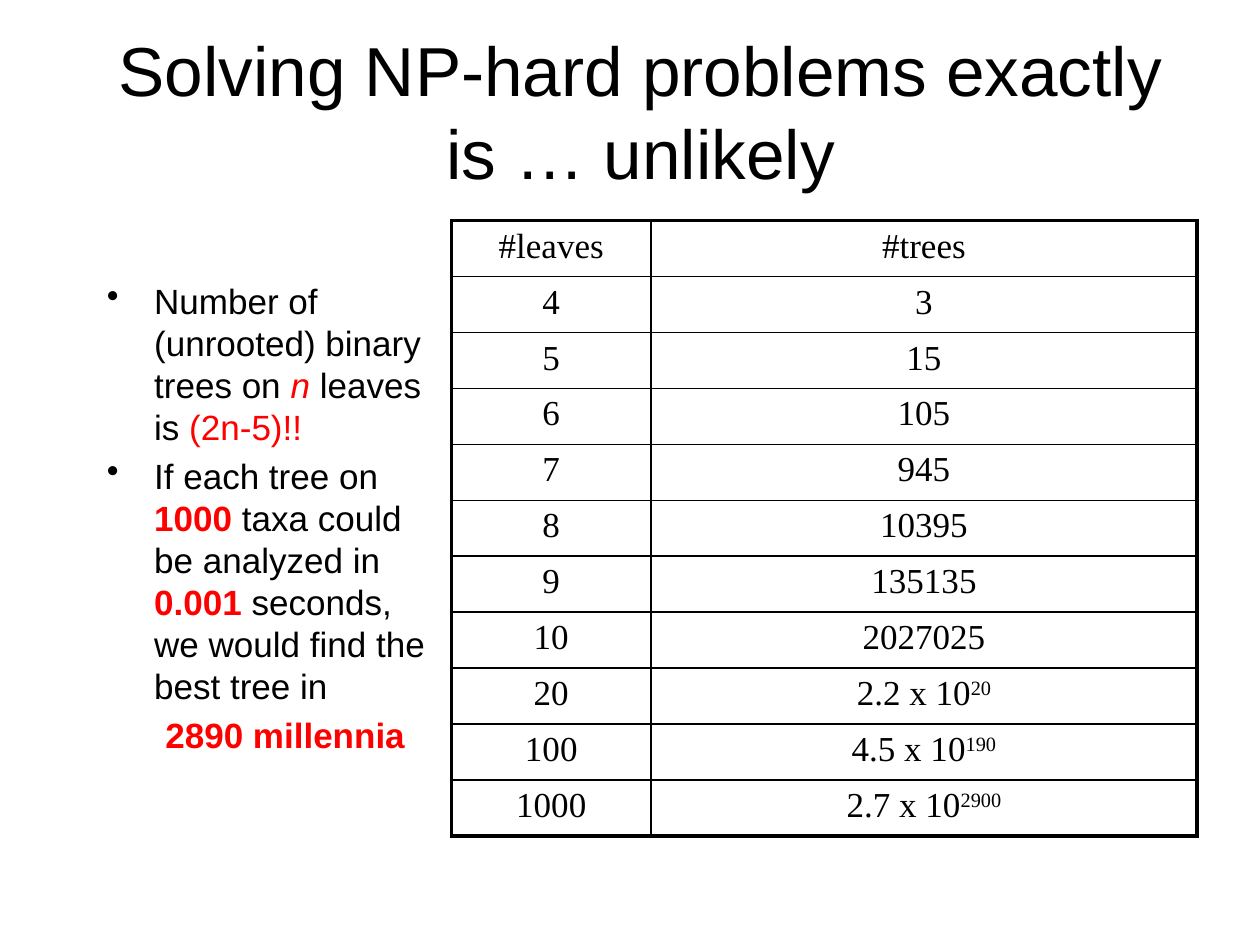
"""Build a slide on how fast the number of binary trees grows."""
import pptx
import pptx.dml.color
import pptx.enum.text
import pptx.oxml
import pptx.oxml.ns
import pptx.util

Pt = pptx.util.Pt
Align = pptx.enum.text.PP_ALIGN
BLACK = pptx.dml.color.RGBColor(0, 0, 0)
RED = pptx.dml.color.RGBColor(255, 0, 0)

TITLE = "Solving NP-hard problems exactly is … unlikely"
POINTS = [
    (True, [("Number of (unrooted) binary trees on ", ""), ("n", "red italic"),
            (" leaves is ", ""), ("(2n-5)!!", "red")]),
    (True, [("If each tree on ", ""), ("1000", "red bold"),
            (" taxa could be analyzed in ", ""), ("0.001", "red bold"),
            (" seconds, we would find the best tree in", "")]),
    (False, [("2890 millennia", "red bold")]),
]
ROWS = [
    ("#leaves", "#trees", ""),
    ("4", "3", ""),
    ("5", "15", ""),
    ("6", "105", ""),
    ("7", "945", ""),
    ("8", "10395", ""),
    ("9", "135135", ""),
    ("10", "2027025", ""),
    ("20", "2.2 x 10", "20"),
    ("100", "4.5 x 10", "190"),
    ("1000", "2.7 x 10", "2900"),
]
WIDTHS = (114, 312)
HEIGHT = 32
THIN, THICK = 1, 2.25


def set_font(font, name, size):
    font.name, font.size = name, Pt(size)
    font.color.rgb = BLACK


def add_text(slide, left, top, width, height):
    frame = slide.shapes.add_textbox(Pt(left), Pt(top), Pt(width), Pt(height)).text_frame
    frame.word_wrap = True
    return frame


def add_title(slide):
    frame = add_text(slide, 60, 18, 612, 90)
    frame.vertical_anchor = pptx.enum.text.MSO_ANCHOR.MIDDLE
    para = frame.paragraphs[0]
    para.text, para.alignment = TITLE, Align.CENTER
    set_font(para.font, "Arial", 39.6)


def add_points(slide):
    frame = add_text(slide, 54, 156, 198.75, 324)
    for i, (dotted, runs) in enumerate(POINTS):
        para = frame.add_paragraph() if i else frame.paragraphs[0]
        set_font(para.font, "Arial", 20)
        para.space_before = Pt(4)
        props = para._p.get_or_add_pPr()
        props.set("marL", str(Pt(27 if dotted else 33.4)))
        if dotted:
            props.set("indent", str(Pt(-27)))
            dot = pptx.oxml.parse_xml(
                f'<a:buChar {pptx.oxml.ns.nsdecls("a")} char="•"/>')
            props.insert_element_before(dot, "a:tabLst", "a:defRPr", "a:extLst")
        for text, look in runs:
            run = para.add_run()
            run.text = text
            if "red" in look:
                run.font.color.rgb = RED
            if "bold" in look:
                run.font.bold = True
            if "italic" in look:
                run.font.italic = True


def set_edges(cell, edges):
    props = cell._tc.get_or_add_tcPr()
    for i, (side, width) in enumerate(edges):
        props.insert(i, pptx.oxml.parse_xml(
            f'<a:ln{side} {pptx.oxml.ns.nsdecls("a")} w="{Pt(width)}"><a:solidFill>'
            f'<a:srgbClr val="{BLACK}"/></a:solidFill></a:ln{side}>'))


def add_table(slide):
    count, last = len(ROWS), len(ROWS) - 1
    table = slide.shapes.add_table(count, 2, Pt(258), Pt(126), Pt(sum(WIDTHS)),
                                   Pt(HEIGHT * count)).table
    table.first_row = table.horz_banding = False
    for col, width in zip(table.columns, WIDTHS):
        col.width = Pt(width)
    for r, (leaves, trees, power) in enumerate(ROWS):
        table.rows[r].height = Pt(HEIGHT)
        for c, text in enumerate((leaves, trees)):
            cell = table.cell(r, c)
            cell.fill.background()
            outer = (("L", c == 0), ("R", c == 1), ("T", r == 0), ("B", r == last))
            set_edges(cell, [(side, THICK if out else THIN) for side, out in outer])
            para = cell.text_frame.paragraphs[0]
            para.alignment = Align.CENTER
            set_font(para.font, "Times New Roman", 20)
            para.add_run().text = text
            if c and power:
                run = para.add_run()
                run.text = power
                run.font._element.set("baseline", "30000")


def main():
    deck = pptx.Presentation()
    deck.slide_width, deck.slide_height = Pt(720), Pt(540)
    slide = deck.slides.add_slide(deck.slide_layouts[6])
    add_title(slide)
    add_points(slide)
    add_table(slide)
    deck.save("out.pptx")


if __name__ == "__main__":
    main()
